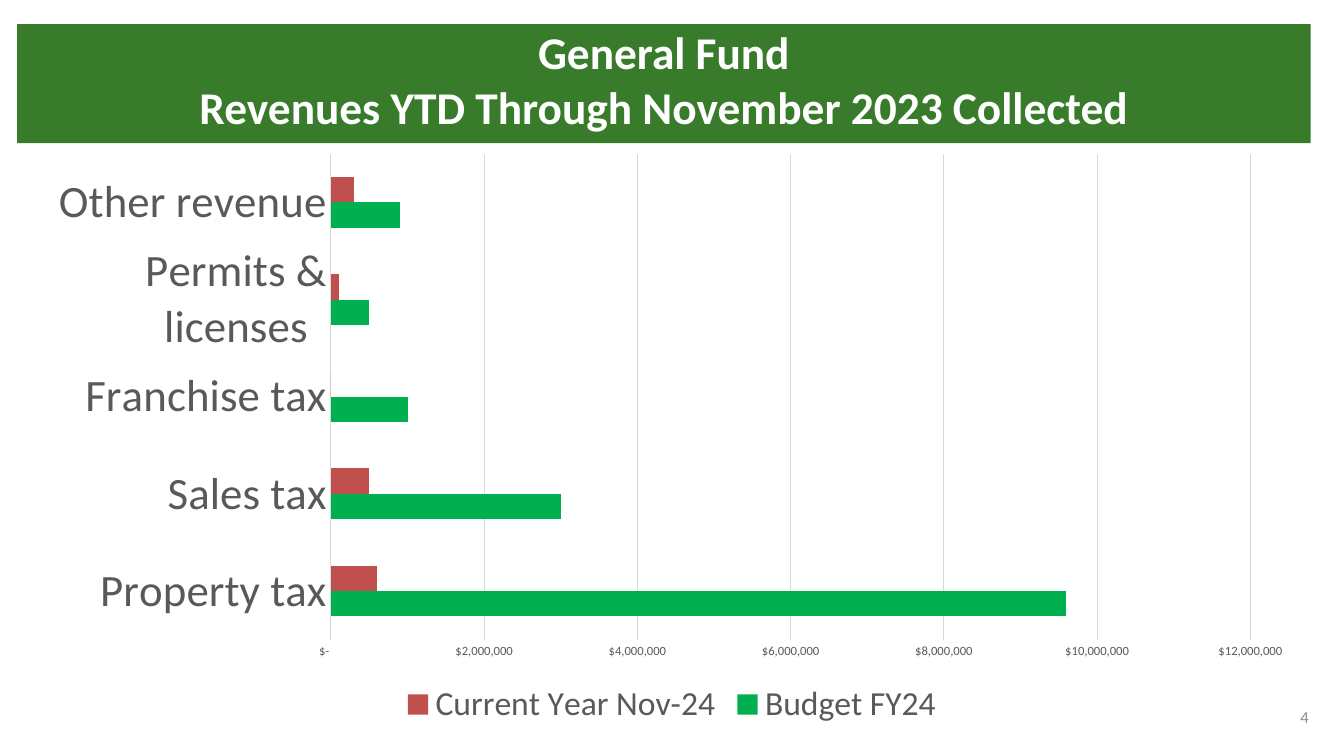
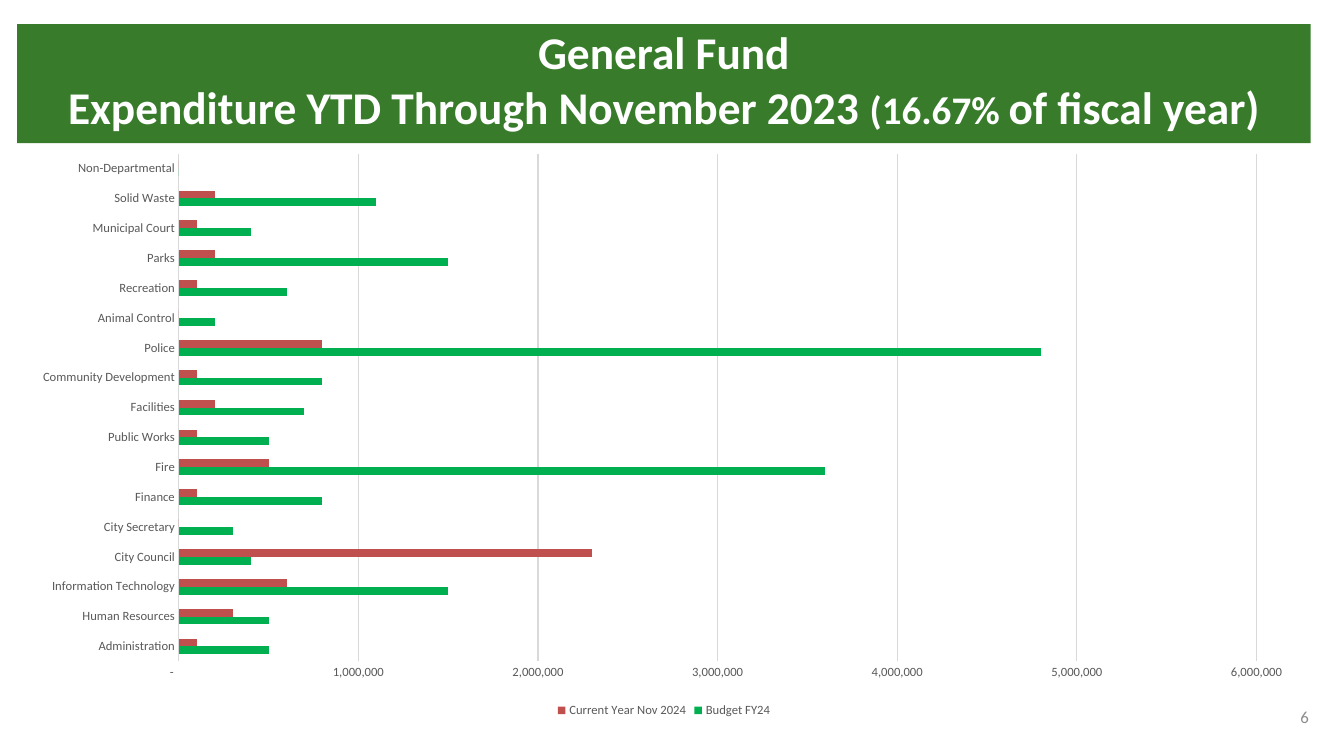
"""Build two slides comparing general fund collections and spending with budget."""
from dataclasses import dataclass

from pptx import Presentation
from pptx import util as u
from pptx.chart import data as chart_data
from pptx.dml import color
from pptx.enum import chart as charts
from pptx.enum import shapes, text


@dataclass(frozen=True)
class Theme:
    """Colours, font and type sizes shared by the slides."""

    font: str = "Calibri"
    band: str = "387C2B"
    on_band: str = "FFFFFF"
    budget: str = "00B050"
    current: str = "C0504D"
    label: str = "595959"
    rule: str = "D9D9D9"
    number: str = "8C8C8C"
    title_size: float = 32.4
    aside_size: float = 27.9
    large_size: float = 32
    legend_size: float = 24
    small_size: float = 9
    number_size: float = 12


THEME = Theme()
DOLLARS = '_($* #,##0_);_($* \\(#,##0\\);_($* "-"??_);_(@_)'
PLAIN = '_(* #,##0_);_(* \\(#,##0\\);_(* "-"??_);_(@_)'

REVENUES = {
    "Property tax": (9600000, 600000),
    "Sales tax": (3000000, 500000),
    "Franchise tax": (1000000, 0),
    "Permits & licenses": (500000, 100000),
    "Other revenue": (900000, 300000),
}
EXPENDITURES = {
    "Administration": (500000, 100000),
    "Human Resources": (500000, 300000),
    "Information Technology": (1500000, 600000),
    "City Council": (400000, 2300000),
    "City Secretary": (300000, 0),
    "Finance": (800000, 100000),
    "Fire": (3600000, 500000),
    "Public Works": (500000, 100000),
    "Facilities": (700000, 200000),
    "Community Development": (800000, 100000),
    "Police": (4800000, 800000),
    "Animal Control": (200000, 0),
    "Recreation": (600000, 100000),
    "Parks": (1500000, 200000),
    "Municipal Court": (400000, 100000),
    "Solid Waste": (1100000, 200000),
    "Non-Departmental": (0, 0),
}


def apply(target, **values):
    """Set each named attribute on the target."""
    for name, value in values.items():
        setattr(target, name, value)


def style_font(font, size, rgb, bold=False):
    """Give a font the theme typeface, a size and a colour."""
    apply(font, name=THEME.font, size=u.Pt(size), bold=bold)
    font.color.rgb = color.RGBColor.from_string(rgb)


def fill_solid(fill, rgb):
    """Fill with one colour."""
    fill.solid()
    fill.fore_color.rgb = color.RGBColor.from_string(rgb)


def style_rule(line):
    """Draw a thin pale line."""
    line.color.rgb = color.RGBColor.from_string(THEME.rule)
    line.width = u.Pt(0.75)


def add_title(slide, lines):
    """Add the green band with centred lines of (wording, size) runs."""
    band = slide.shapes.add_shape(
        shapes.MSO_SHAPE.RECTANGLE,
        u.Inches(0.17), u.Inches(0.24), u.Inches(12.83), u.Inches(1.18))
    band.shadow.inherit = False
    fill_solid(band.fill, THEME.band)
    band.line.fill.background()
    frame = band.text_frame
    apply(frame, word_wrap=True, vertical_anchor=text.MSO_ANCHOR.MIDDLE,
          margin_top=0, margin_bottom=u.Inches(0.1))
    for index, runs in enumerate(lines):
        paragraph = frame.add_paragraph() if index else frame.paragraphs[0]
        paragraph.alignment = text.PP_ALIGN.CENTER
        for wording, size in runs:
            run = paragraph.add_run()
            run.text = wording
            style_font(run.font, size, THEME.on_band, bold=True)


def add_number(slide, number):
    """Add the slide number at the lower right."""
    box = slide.shapes.add_textbox(
        u.Inches(10.75), u.Inches(6.91), u.Inches(2.33), u.Inches(0.4))
    apply(box.text_frame, word_wrap=True,
          vertical_anchor=text.MSO_ANCHOR.MIDDLE)
    paragraph = box.text_frame.paragraphs[0]
    apply(paragraph, text=str(number), alignment=text.PP_ALIGN.RIGHT)
    style_font(paragraph.font, THEME.number_size, THEME.number)


def style_axes(chart, category_size, number_format):
    """Format the category labels, value labels and gridlines."""
    for axis, size in ((chart.category_axis, category_size),
                       (chart.value_axis, THEME.small_size)):
        apply(axis, major_tick_mark=charts.XL_TICK_MARK.NONE,
              minor_tick_mark=charts.XL_TICK_MARK.NONE)
        style_font(axis.tick_labels.font, size, THEME.label)
    style_rule(chart.category_axis.format.line)
    amounts = chart.value_axis
    amounts.has_major_gridlines = True
    style_rule(amounts.major_gridlines.format.line)
    amounts.format.line.fill.background()
    apply(amounts.tick_labels, number_format=number_format,
          number_format_is_linked=False)


def add_comparison(slide, place, amounts, names, number_format,
                   category_size, legend_size):
    """Add clustered bars of budget and current-year amounts."""
    content = chart_data.CategoryChartData(number_format=number_format)
    content.categories = list(amounts)
    for name, values in zip(names, zip(*amounts.values())):
        content.add_series(name, values)
    chart = slide.shapes.add_chart(
        charts.XL_CHART_TYPE.BAR_CLUSTERED,
        *map(u.Inches, place), content).chart
    style_font(chart.font, THEME.small_size, THEME.label)
    apply(chart, has_title=False, has_legend=True)
    apply(chart.legend, position=charts.XL_LEGEND_POSITION.BOTTOM,
          include_in_layout=False)
    style_font(chart.legend.font, legend_size, THEME.label)
    style_axes(chart, category_size, number_format)
    apply(chart.plots[0], gap_width=182, overlap=0, vary_by_categories=False)
    for series, rgb in zip(chart.plots[0].series,
                           (THEME.budget, THEME.current)):
        fill_solid(series.format.fill, rgb)


def add_fund_slide(deck, number, subtitle, **comparison):
    """Add a slide with the fund title, its bars and its number."""
    slide = deck.slides.add_slide(deck.slide_layouts[6])
    add_number(slide, number)
    add_title(slide, [[("General Fund", THEME.title_size)], subtitle])
    add_comparison(slide, **comparison)


def main():
    """Build and save the presentation."""
    deck = Presentation()
    apply(deck, slide_width=u.Inches(13.33), slide_height=u.Inches(7.5))
    add_fund_slide(
        deck, 4,
        [("Revenues YTD Through November 2023 Collected", THEME.title_size)],
        place=(0.33, 1.41, 12.67, 5.85), amounts=REVENUES,
        names=("Budget FY24", "Current Year Nov-24"), number_format=DOLLARS,
        category_size=THEME.large_size, legend_size=THEME.legend_size)
    add_fund_slide(
        deck, 6,
        [("Expenditure YTD Through November 2023 ", THEME.title_size),
         ("(16.67% ", THEME.aside_size),
         ("of fiscal year)", THEME.title_size)],
        place=(0.17, 1.41, 12.83, 5.75), amounts=EXPENDITURES,
        names=("Budget FY24", "Current Year Nov 2024"), number_format=PLAIN,
        category_size=THEME.small_size, legend_size=THEME.small_size)
    deck.save("out.pptx")


if __name__ == "__main__":
    main()
